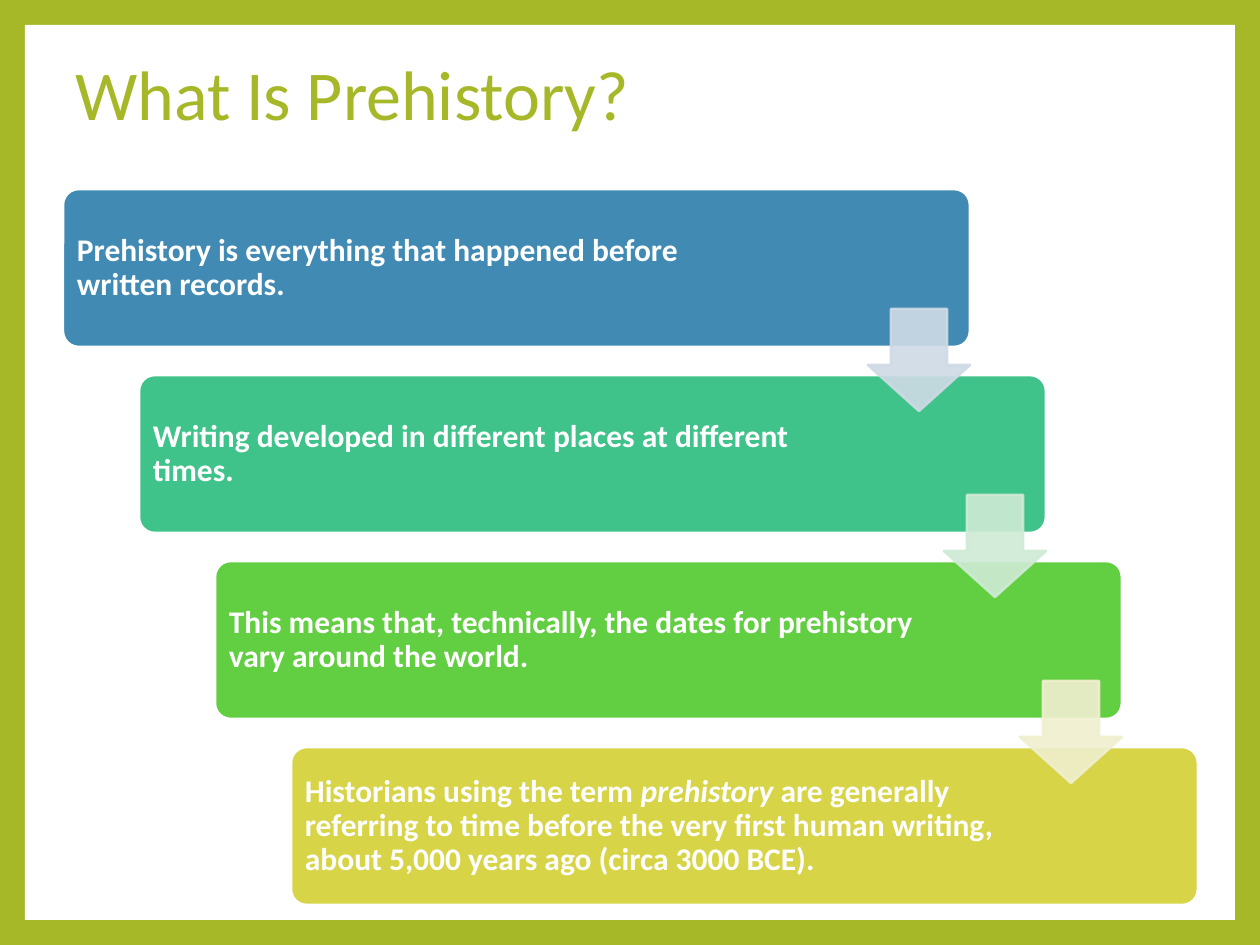
from lxml.etree import SubElement
from pptx import Presentation
from pptx.dml.color import RGBColor
from pptx.enum.shapes import MSO_SHAPE
from pptx.enum.text import MSO_ANCHOR
from pptx.oxml.ns import qn
from pptx.util import Emu, Pt

PX_PER_INCH = 126
FONT = "Calibri"
OLIVE = RGBColor(0xA6, 0xB7, 0x27)
WHITE = RGBColor(0xFF, 0xFF, 0xFF)
BLUE = RGBColor(0x41, 0x8A, 0xB3)
TEAL = RGBColor(0x3F, 0xC3, 0x8A)
GREEN = RGBColor(0x62, 0xCE, 0x42)
YELLOW = RGBColor(0xD7, 0xD4, 0x47)
PALE_BLUE = RGBColor(0xCF, 0xDA, 0xE5)
PALE_TEAL = RGBColor(0xCF, 0xEB, 0xD5)
PALE_YELLOW = RGBColor(0xF0, 0xEF, 0xCF)

STEP_X, STEP_Y = 76, 186
STEPS = [
    (BLUE, ["Prehistory is everything that happened before written records."]),
    (TEAL, ["Writing developed in different places at different times."]),
    (GREEN, ["This means that, technically, the dates for prehistory vary around the world."]),
    (YELLOW, [
        "Historians using the term ",
        "prehistory",
        " are generally referring to time before the very first human writing, "
        "about 5,000 years ago (circa 3000 BCE).",
    ]),
]
ARROW_COLORS = [PALE_BLUE, PALE_TEAL, PALE_YELLOW]


def px(value):
    return Emu(round(value * 914400 / PX_PER_INCH))


def add_block(slide, kind, box, fill, line=None, adjustments=()):
    shape = slide.shapes.add_shape(kind, *map(px, box))
    shape.shadow.inherit = False
    shape.fill.solid()
    shape.fill.fore_color.rgb = fill
    if line is None:
        shape.line.fill.background()
    else:
        shape.line.color.rgb = line
        shape.line.width = Pt(1.5)
    for index, value in enumerate(adjustments):
        shape.adjustments[index] = value
    return shape


def add_label(slide, box, texts, size, color, bold=False, inset=None):
    text_frame = slide.shapes.add_textbox(*map(px, box)).text_frame
    text_frame.word_wrap = True
    text_frame.vertical_anchor = MSO_ANCHOR.MIDDLE
    if inset is not None:
        text_frame.margin_left = text_frame.margin_right = px(inset)
        text_frame.margin_top = text_frame.margin_bottom = px(inset)
    paragraph = text_frame.paragraphs[0]
    paragraph.line_spacing = 0.9
    for index, text in enumerate(texts):
        run = paragraph.add_run()
        run.text = text
        run.font.name = FONT
        run.font.size = Pt(size)
        run.font.color.rgb = color
        run.font.bold = bold
        run.font.italic = index == 1


def set_opacity(shape, percent):
    for color in shape._element.spPr.iter(qn("a:srgbClr")):
        SubElement(color, qn("a:alpha"), val=str(percent * 1000))


def add_step(slide, index, color, texts):
    left, top = 63 + index * STEP_X, 189 + index * STEP_Y
    add_block(slide, MSO_SHAPE.ROUNDED_RECTANGLE, (left, top, 907, 158), color, WHITE, [0.1])
    add_label(slide, (left + 5, top + 5, 720, 148), texts, 18, WHITE, bold=True, inset=9)


def add_arrow(slide, index, color):
    box = (868 + index * STEP_X, 309 + index * STEP_Y, 102, 102)
    arrow = add_block(slide, MSO_SHAPE.DOWN_ARROW, box, color, color)
    arrow.adjustments[0] = 0.55
    arrow.adjustments[1] = 0.45
    set_opacity(arrow, 90)


def main():
    presentation = Presentation()
    presentation.slide_width, presentation.slide_height = px(1260), px(945)
    slide = presentation.slides.add_slide(presentation.slide_layouts[6])
    slide.background.fill.solid()
    slide.background.fill.fore_color.rgb = OLIVE
    add_block(slide, MSO_SHAPE.RECTANGLE, (25, 25, 1210, 895), WHITE)
    add_label(slide, (63, 38, 1134, 120), ["What Is Prehistory?"], 40, OLIVE)
    for index, (color, texts) in enumerate(STEPS):
        add_step(slide, index, color, texts)
    for index, color in enumerate(ARROW_COLORS):
        add_arrow(slide, index, color)
    presentation.save("out.pptx")


if __name__ == "__main__":
    main()
